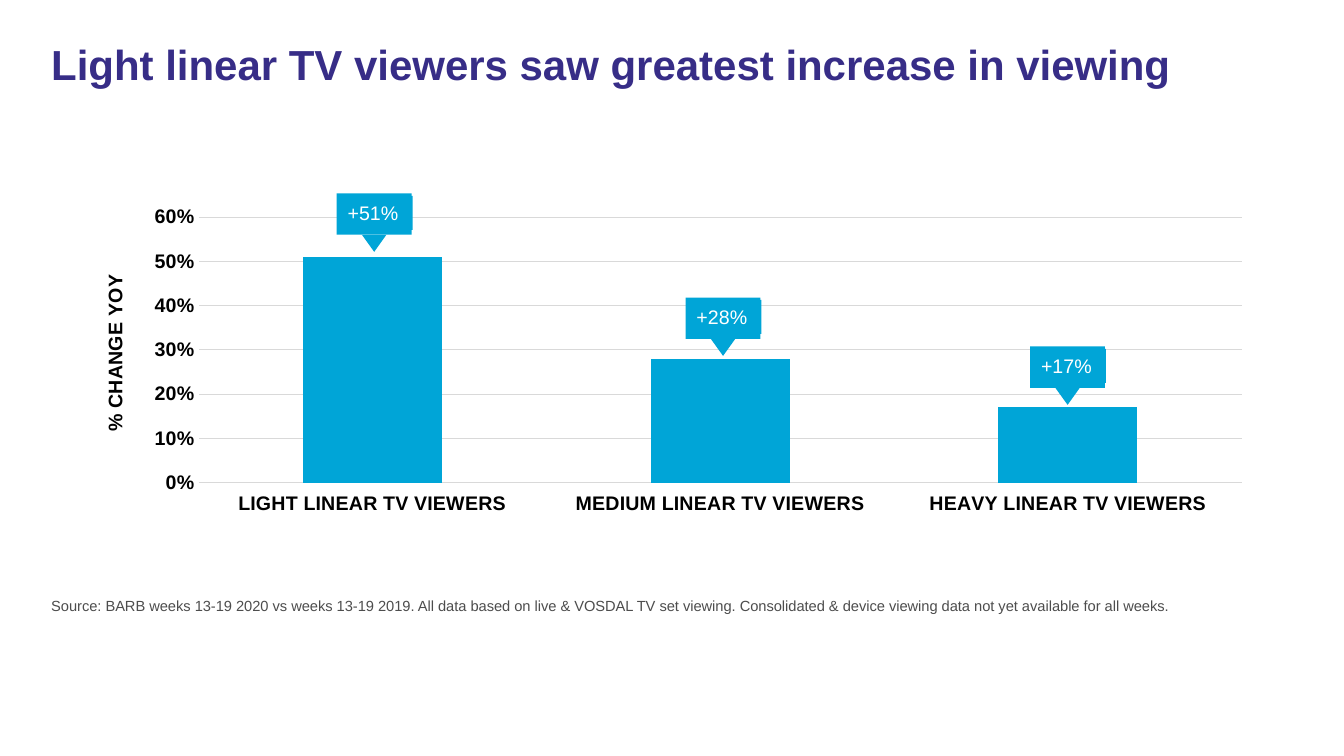
"""Build the slide on year-on-year change in viewing by linear TV audience."""
from lxml.etree import SubElement
from pptx import Presentation
from pptx.chart.data import CategoryChartData
from pptx.dml.color import RGBColor
from pptx.enum.chart import XL_CHART_TYPE as CHART, XL_TICK_LABEL_POSITION as LABELS, XL_TICK_MARK as TICK
from pptx.enum.shapes import MSO_SHAPE as SHAPE
from pptx.enum.text import MSO_ANCHOR as ANCHOR, PP_ALIGN as ALIGN
from pptx.oxml.ns import qn
from pptx.util import Pt

TITLE = "Light linear TV viewers saw greatest increase in viewing"
SOURCE = ("Source: BARB weeks 13-19 2020 vs weeks 13-19 2019. All data based on live & VOSDAL TV set viewing. "
          "Consolidated & device viewing data not yet available for all weeks.")
AXIS_TITLE = "% CHANGE YOY"
VIEWERS = [
    ("LIGHT LINEAR TV VIEWERS", 0.51, (240.5, 138.2)),
    ("MEDIUM LINEAR TV VIEWERS", 0.28, (489.7, 212.5)),
    ("HEAVY LINEAR TV VIEWERS", 0.17, (735.8, 247.5)),
]
FONT = "Arial"
PURPLE, BLUE, GREY, RULE, BLACK, WHITE = "372D87", "00A5D7", "4D4D4D", "D9D9D9", "000000", "FFFFFF"


def paint(target, color):
    target.solid()
    target.fore_color.rgb = RGBColor.from_string(color)


def style(font, size, color, bold=False):
    font.name, font.size, font.bold = FONT, Pt(size), bold
    font.color.rgb = RGBColor.from_string(color)


def add_run(p, text, size, color, bold=False):
    r = p.add_run()
    r.text = text
    style(r.font, size, color, bold)


def add_text(slide, box, text, size, color, bold=False, spacing=1.0):
    tf = slide.shapes.add_textbox(*map(Pt, box)).text_frame
    tf.word_wrap = True
    p = tf.paragraphs[0]
    p.line_spacing = spacing
    add_run(p, text, size, color, bold)


def set_layout(parent, index, **values):
    for old in parent.findall(qn("c:layout")):
        parent.remove(old)
    layout = SubElement(parent, qn("c:layout"))
    manual = SubElement(layout, qn("c:manualLayout"))
    for tag, value in values.items():
        SubElement(manual, qn(f"c:{tag}")).set("val", str(value))
    parent.insert(index, layout)


def add_chart(slide):
    data = CategoryChartData(number_format="0%")
    data.categories = [name for name, _, _ in VIEWERS]
    data.add_series("Series 1", [value for _, value, _ in VIEWERS])
    box = map(Pt, (62, 93.6, 840.2, 303.1))
    chart = slide.shapes.add_chart(CHART.COLUMN_CLUSTERED, *box, data).chart
    chart.has_title = chart.has_legend = False
    style(chart.font, 10, BLACK)
    plot = chart.plots[0]
    plot.gap_width, plot.vary_by_categories = 150, False
    paint(plot.series[0].format.fill, BLUE)

    cat, val = chart.category_axis, chart.value_axis
    for axis in (cat, val):
        axis.major_tick_mark = axis.minor_tick_mark = TICK.NONE
        style(axis.tick_labels.font, 14, BLACK, True)
    cat.tick_label_position = LABELS.LOW
    val.minimum_scale, val.maximum_scale, val.major_unit = 0, 0.6, 0.1
    val.tick_labels.number_format = "0%"
    val.tick_labels.number_format_is_linked = False
    val.format.line.fill.background()
    for line in (cat.format.line, val.major_gridlines.format.line):
        paint(line.fill, RULE)
        line.width = Pt(0.75)

    title = val.axis_title
    tf = title.text_frame
    add_run(tf.paragraphs[0], AXIS_TITLE, 14, BLACK, True)
    body = tf._txBody.find(qn("a:bodyPr"))
    body.set("rot", "-5400000")
    body.set("vert", "horz")
    set_layout(title._element, 1, xMode="edge", yMode="edge", x=0.01, y=0.33)
    set_layout(chart._chartSpace.chart.plotArea, 0, layoutTarget="inner", xMode="edge", yMode="edge",
               x=0.095, y=0.203, w=0.887, h=0.626)


def add_part(group, kind, x, y, w, h):
    sp = group.shapes.add_shape(kind, Pt(x), Pt(y), Pt(w), Pt(h))
    sp.shadow.inherit = False
    paint(sp.fill, BLUE)
    sp.line.fill.background()
    return sp


def add_callout(slide, x, y, value):
    group = slide.shapes.add_group_shape()
    add_part(group, SHAPE.RECTANGLE, x, y, 53.5, 29.5)
    add_part(group, SHAPE.ISOSCELES_TRIANGLE, x + 18, y + 29.5, 17.5, 12.2).rotation = 180
    label = add_part(group, SHAPE.RECTANGLE, x + 0.7, y + 1.7, 53.5, 24.3)
    tf = label.text_frame
    tf.word_wrap, tf.vertical_anchor = False, ANCHOR.MIDDLE
    p = tf.paragraphs[0]
    p.alignment = ALIGN.LEFT
    add_run(p, f"{value:+.0%}", 14, WHITE)


def main():
    prs = Presentation()
    prs.slide_width, prs.slide_height = Pt(960), Pt(540)
    slide = prs.slides.add_slide(prs.slide_layouts[6])
    add_text(slide, (29.5, 28, 893, 80.6), TITLE, 30, PURPLE, True, 0.9)
    add_text(slide, (29.5, 422.6, 893, 23.8), SOURCE, 10.5, GREY)
    add_chart(slide)
    for _, value, (x, y) in VIEWERS:
        add_callout(slide, x, y, value)
    prs.save("out.pptx")


if __name__ == "__main__":
    main()
